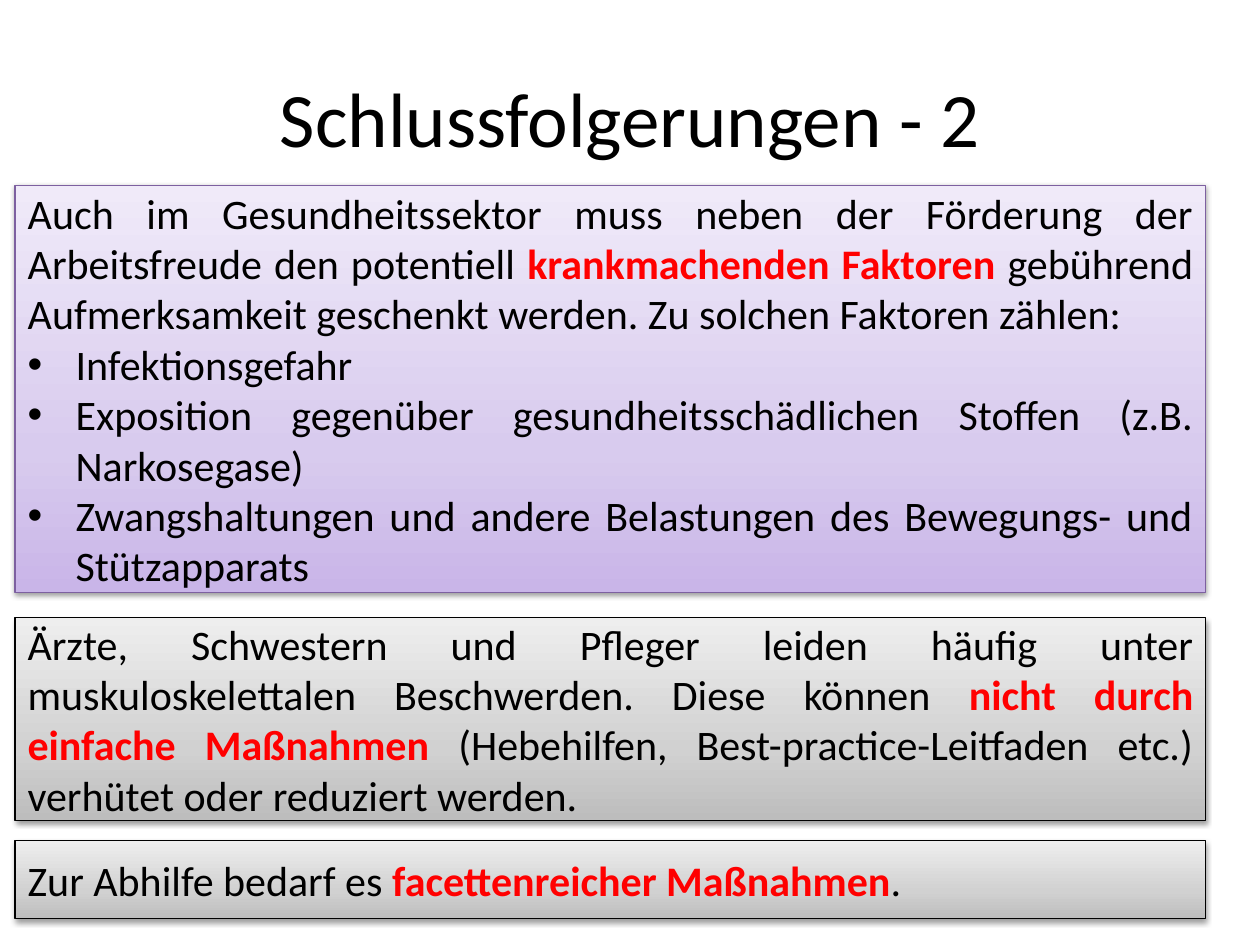
from copy import deepcopy
from dataclasses import dataclass

from lxml import etree
from pptx import Presentation
from pptx.dml.color import RGBColor
from pptx.enum.shapes import MSO_SHAPE
from pptx.enum.text import MSO_ANCHOR, MSO_AUTO_SIZE, PP_ALIGN
from pptx.oxml.ns import qn
from pptx.util import Inches, Pt

RECT = MSO_SHAPE.RECTANGLE
MIDDLE = MSO_ANCHOR.MIDDLE
FIXED = MSO_AUTO_SIZE.NONE
CENTER, JUSTIFY = PP_ALIGN.CENTER, PP_ALIGN.JUSTIFY
WIDTH, HEIGHT = 10, 7.5
LEFT, SPAN = 0.12, 9.45


@dataclass(frozen=True)
class Theme:
    font: str = "Calibri"
    title: int = 44
    body: int = 24
    ink: str = "000000"
    accent: str = "FF0000"
    edge: str = "7D60A0"
    violet: tuple = ("C9B5E8", "D8CBEE", "F0EAF9")
    gray: tuple = ("BDBDBD", "D1D1D1", "EEEEEE")
    stops: tuple = (0, 0.35, 1)


THEME = Theme()

INTRO = (
    "Auch im Gesundheitssektor muss neben der Förderung der Arbeitsfreude den "
    "potentiell *krankmachenden Faktoren* gebührend Aufmerksamkeit geschenkt "
    "werden. Zu solchen Faktoren zählen:"
)
RISKS = (
    "Infektionsgefahr",
    "Exposition gegenüber gesundheitsschädlichen Stoffen (z.B. Narkosegase)",
    "Zwangshaltungen und andere Belastungen des Bewegungs- und Stützapparats",
)
STRAIN = (
    "Ärzte, Schwestern und Pfleger leiden häufig unter muskuloskelettalen "
    "Beschwerden. Diese können *nicht durch einfache Maßnahmen* (Hebehilfen, "
    "Best-practice-Leitfaden etc.) verhütet oder reduziert werden."
)
REMEDY = "Zur Abhilfe bedarf es *facettenreicher Maßnahmen*."


def place(shape, box):
    shape.left, shape.top, shape.width, shape.height = map(Inches, box)


def write(para, text, size=THEME.body, align=JUSTIFY, bullet=False):
    """Fill a paragraph; words between asterisks are accented."""
    para.alignment = align
    para.space_before = Pt(0)
    indent = Inches(0.38) if bullet else 0
    props = para._p.get_or_add_pPr()
    props.set("marL", str(indent))
    props.set("indent", str(-indent))
    if bullet:
        etree.SubElement(props, qn("a:buFont"), typeface="Arial")
        etree.SubElement(props, qn("a:buChar"), char="•")
    else:
        etree.SubElement(props, qn("a:buNone"))
    for i, part in enumerate(text.split("*")):
        strong = i % 2 == 1
        run = para.add_run()
        run.text = part
        run.font.name = THEME.font
        run.font.size = Pt(size)
        run.font.bold = strong
        run.font.color.rgb = RGBColor.from_string(THEME.accent if strong else THEME.ink)


def shade(shape, colors):
    """Give a shape a three-stop gradient that runs upwards."""
    shape.fill.gradient()
    shape.fill.gradient_angle = 90
    first = shape._element.spPr.find(".//" + qn("a:gs"))
    first.addnext(deepcopy(first))
    for stop, color, pos in zip(shape.fill.gradient_stops, colors, THEME.stops):
        stop.color.rgb = RGBColor.from_string(color)
        stop.position = pos


def cast(shape):
    """Give a shape a soft shadow below it."""
    shape.shadow.inherit = False
    effects = shape._element.spPr.find(qn("a:effectLst"))
    outer = etree.SubElement(
        effects, qn("a:outerShdw"), blurRad=str(Pt(3.1)), dist=str(Pt(1.6)),
        dir="5400000", rotWithShape="0")
    color = etree.SubElement(outer, qn("a:srgbClr"), val=THEME.ink)
    etree.SubElement(color, qn("a:alpha"), val="38000")


def panel(shape, box, colors, edge, text, items=()):
    place(shape, box)
    shade(shape, colors)
    shape.line.color.rgb = RGBColor.from_string(edge)
    shape.line.width = Pt(0.75)
    cast(shape)
    frame = shape.text_frame
    frame.word_wrap = True
    frame.auto_size = FIXED
    frame.vertical_anchor = MIDDLE
    write(frame.paragraphs[0], text)
    for item in items:
        write(frame.add_paragraph(), item, bullet=True)


def head(shape, box, text):
    place(shape, box)
    shape.text_frame.auto_size = FIXED
    shape.text_frame.vertical_anchor = MIDDLE
    write(shape.text_frame.paragraphs[0], text, size=THEME.title, align=CENTER)


def main():
    deck = Presentation()
    deck.slide_width, deck.slide_height = Inches(WIDTH), Inches(HEIGHT)
    slide = deck.slides.add_slide(deck.slide_layouts[1])
    title, body = slide.placeholders
    head(title, (0.5, 0.3, WIDTH - 1, 1.25), "Schlussfolgerungen - 2")
    panel(body, (LEFT, 1.47, SPAN, 3.23), THEME.violet, THEME.edge, INTRO, RISKS)
    for top, height, text in ((4.9, 1.61, STRAIN), (6.67, 0.62, REMEDY)):
        box = (LEFT, top, SPAN, height)
        shape = slide.shapes.add_shape(RECT, *map(Inches, box))
        panel(shape, box, THEME.gray, THEME.ink, text)
    deck.save("out.pptx")


if __name__ == "__main__":
    main()
